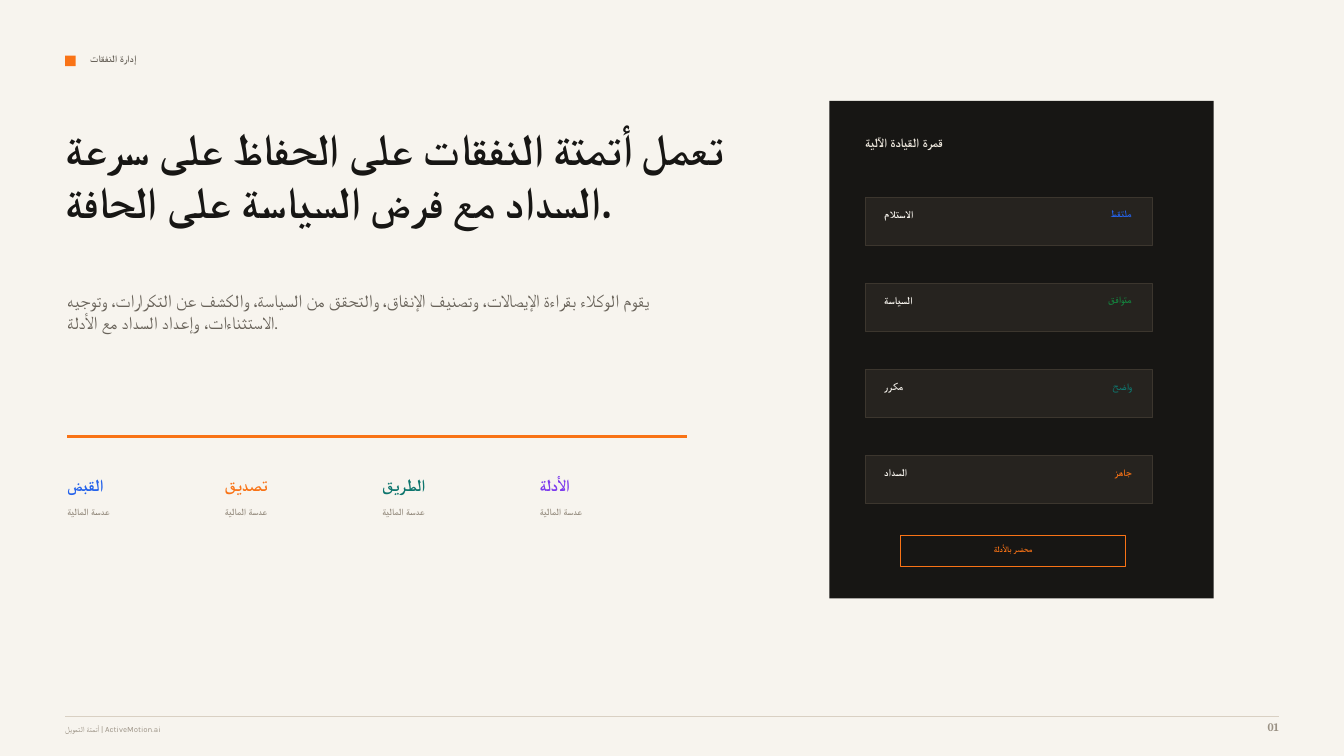
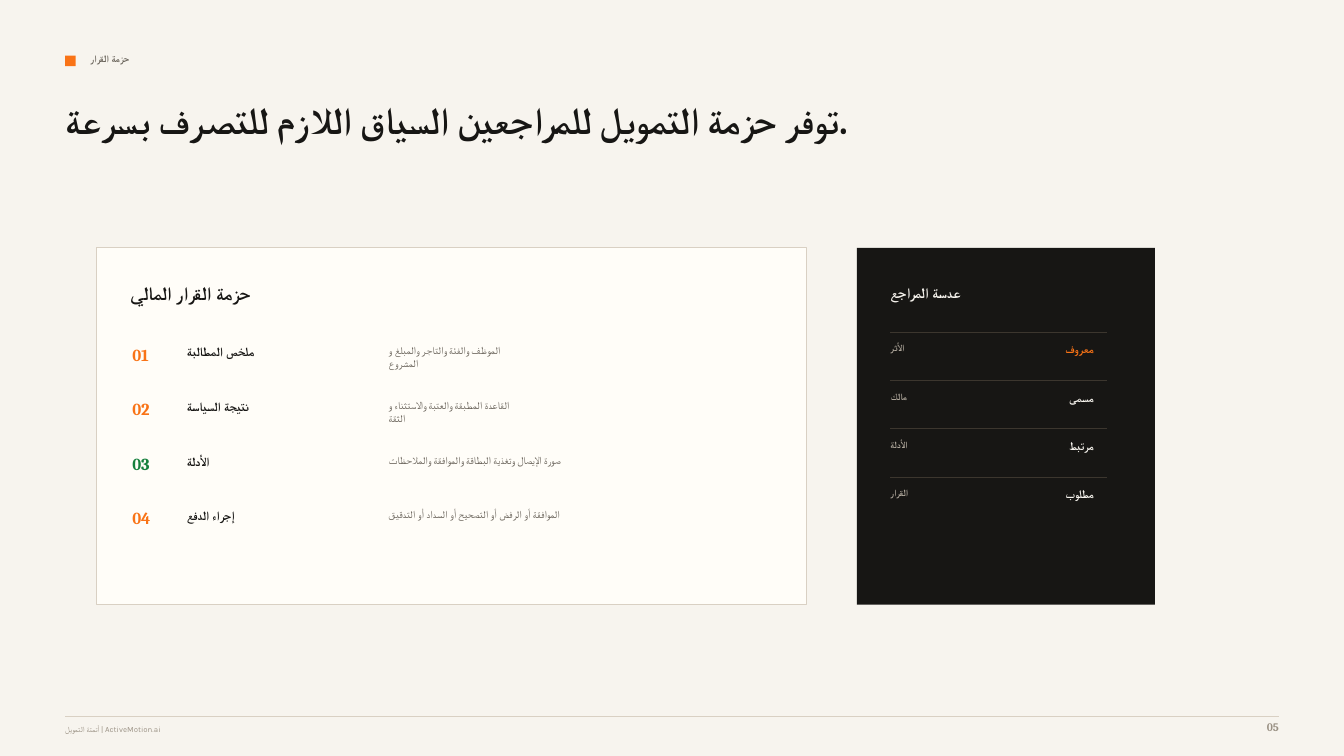
from lxml.etree import SubElement
from pptx import Presentation
from pptx.dml.color import RGBColor
from pptx.enum.shapes import MSO_CONNECTOR, MSO_SHAPE
from pptx.enum.text import MSO_ANCHOR, MSO_AUTO_SIZE, PP_ALIGN
from pptx.oxml.ns import qn
from pptx.util import Pt

PX = 9525  # EMU per px, 96 px to the inch
HAIRLINE = 0.75

# Colours
CREAM = RGBColor(0xF7, 0xF4, 0xEE)
IVORY = RGBColor(0xFF, 0xFD, 0xF8)
INK = RGBColor(0x17, 0x16, 0x14)
COAL = RGBColor(0x26, 0x23, 0x1F)
EDGE = RGBColor(0x3C, 0x36, 0x2E)
SAND = RGBColor(0xD9, 0xD0, 0xC3)
LINEN = RGBColor(0xED, 0xE7, 0xDD)
STONE = RGBColor(0xAF, 0xA7, 0x9B)
MUTED = RGBColor(0x9A, 0x91, 0x84)
GREY = RGBColor(0x69, 0x63, 0x5A)
ORANGE = RGBColor(0xF9, 0x73, 0x16)
BLUE = RGBColor(0x25, 0x63, 0xEB)
GREEN = RGBColor(0x15, 0x80, 0x3D)
TEAL = RGBColor(0x0F, 0x76, 0x6E)
VIOLET = RGBColor(0x7C, 0x3A, 0xED)

# Fonts
SERIF = "Cambria"
SANS = "Karla"


def write(tf, text, size=9, color=INK, font=SANS, bold=True, align=PP_ALIGN.LEFT, top=0):
    """Fill a text frame, one paragraph per line of text."""
    tf.word_wrap = True
    tf.auto_size = MSO_AUTO_SIZE.NONE
    tf.vertical_anchor = MSO_ANCHOR.TOP
    tf.margin_left = tf.margin_right = tf.margin_bottom = 0
    tf.margin_top = top * PX
    for i, line in enumerate(text.split("\n")):
        p = tf.add_paragraph() if i else tf.paragraphs[0]
        p.alignment = align
        r = p.add_run()
        r.text = line
        r.font.size = Pt(size)
        r.font.bold = bold
        r.font.name = font
        r.font.color.rgb = color
        # Arabic takes the complex-script font; no pair kerning, so spaces keep their width
        r.font._element.set("kern", "0")
        SubElement(r.font._element, qn("a:cs"), typeface=font)


class Deck:
    """Shared style and the slide being built; lengths are in px."""

    def __init__(self):
        self.prs = Presentation()
        self.prs.slide_width = 1280 * PX
        self.prs.slide_height = 720 * PX
        fill = self.prs.slide_master.background.fill
        fill.solid()
        fill.fore_color.rgb = CREAM
        self.s = None

    def slide(self, section, title, title_box, title_size, page):
        self.s = self.prs.slides.add_slide(self.prs.slide_layouts[5])
        # Section marker
        self.rect(62, 53, 10, 10, fill=ORANGE)
        self.text(86, 50, 560, 18, section, size=7.1, color=GREY)
        # Title
        sp = self.s.shapes.title
        sp.left, sp.top, sp.width, sp.height = (v * PX for v in title_box)
        write(sp.text_frame, title, size=title_size, font=SERIF)
        # Footer
        self.rule(62, 682, 1156, SAND)
        self.text(62, 690, 760, 14, "أتمتة التمويل | ActiveMotion.ai",
                  size=5.6, color=MUTED, bold=False)
        self.text(1170, 686, 48, 18, page, size=8.2, color=MUTED, font=SERIF,
                  align=PP_ALIGN.RIGHT)

    def text(self, x, y, w, h, text, **fmt):
        sp = self.s.shapes.add_textbox(x * PX, y * PX, w * PX, h * PX)
        write(sp.text_frame, text, **fmt)

    def rect(self, x, y, w, h, fill=None, line=None):
        sp = self.s.shapes.add_shape(MSO_SHAPE.RECTANGLE, x * PX, y * PX, w * PX, h * PX)
        sp.shadow.inherit = False
        if fill is None:
            sp.fill.background()
        else:
            sp.fill.solid()
            sp.fill.fore_color.rgb = fill
        if line is None:
            sp.line.fill.background()
        else:
            sp.line.color.rgb = line
            sp.line.width = Pt(HAIRLINE)
        return sp

    def rule(self, x, y, w, color, thickness=1):
        """Horizontal line whose upper edge is at y."""
        mid = y * PX + thickness * PX // 2
        ln = self.s.shapes.add_connector(MSO_CONNECTOR.STRAIGHT, x * PX, mid, (x + w) * PX, mid)
        ln.line.color.rgb = color
        ln.line.width = thickness * PX
        SubElement(ln._element.spPr, qn("a:effectLst"))


def overview(d):
    d.slide("إدارة النفقات",
            "تعمل أتمتة النفقات على الحفاظ على سرعة السداد مع فرض السياسة على الحافة.",
            (62, 116, 690, 126), 31.5, "01")
    d.text(64, 276, 620, 88,
           "يقوم الوكلاء بقراءة الإيصالات، وتصنيف الإنفاق، والتحقق من السياسة، "
           "والكشف عن التكرارات، وتوجيه الاستثناءات، وإعداد السداد مع الأدلة.",
           size=12.8, color=GREY, bold=False)

    # Four steps under the orange rule
    d.rule(64, 414, 590, ORANGE, thickness=3)
    steps = [("القبض", BLUE), ("تصديق", ORANGE), ("الطريق", TEAL), ("الأدلة", VIOLET)]
    for i, (step, color) in enumerate(steps):
        x = 64 + 150 * i
        d.text(x, 452, 120, 20, step, size=12, color=color, font=SERIF)
        d.text(x, 482, 110, 16, "عدسة المالية", size=6.8, color=MUTED)

    # Cockpit panel
    d.rect(790, 96, 366, 474, fill=INK)
    d.text(824, 128, 220, 24, "قمرة القيادة الآلية", color=LINEN)
    checks = [("الاستلام", "ملتقط", BLUE), ("السياسة", "متوافق", GREEN),
              ("مكرر", "واضح", TEAL), ("السداد", "جاهز", ORANGE)]
    for i, (check, status, color) in enumerate(checks):
        y = 188 + 82 * i
        d.rect(824, y, 274, 46, fill=COAL, line=EDGE)
        d.text(842, y + 10, 130, 16, check, size=7.5, color=CREAM)
        d.text(982, y + 10, 96, 16, status, size=7.1, color=color, align=PP_ALIGN.RIGHT)
    badge = d.rect(858, 510, 214, 30, line=ORANGE)
    write(badge.text_frame, "محضر بالأدلة", size=6, color=ORANGE,
          align=PP_ALIGN.CENTER, top=8)


def decision_packet(d):
    d.slide("حزمة القرار", "توفر حزمة التمويل للمراجعين السياق اللازم للتصرف بسرعة.",
            (62, 92, 900, 98), 27, "05")

    # Packet card
    d.rect(92, 236, 676, 340, fill=IVORY, line=SAND)
    d.text(124, 268, 300, 24, "حزمة القرار المالي", size=13.5)
    parts = [
        ("ملخص المطالبة", "الموظف والفئة والتاجر والمبلغ و\nالمشروع", ORANGE),
        ("نتيجة السياسة", "القاعدة المطبقة والعتبة والاستثناء و\nالثقة", ORANGE),
        ("الأدلة", "صورة الإيصال وتغذية البطاقة والموافقة والملاحظات", GREEN),
        ("إجراء الدفع", "الموافقة أو الرفض أو التصحيح أو السداد أو التدقيق", ORANGE),
    ]
    for i, (part, detail, color) in enumerate(parts):
        y = 328 + 52 * i
        d.text(126, y, 34, 24, f"{i + 1:02}", size=12, color=color, font=SERIF)
        d.text(178, y, 174, 18, part)
        d.text(370, y, 320, 30, detail, size=7.5, color=GREY, bold=False)

    # Reviewer panel
    d.rect(816, 236, 284, 340, fill=INK)
    d.text(848, 270, 160, 20, "عدسة المراجع", size=10.5, color=CREAM)
    facts = [("الأثر", "معروف", ORANGE), ("مالك", "مسمى", CREAM),
             ("الأدلة", "مرتبط", CREAM), ("القرار", "مطلوب", CREAM)]
    for i, (fact, state, color) in enumerate(facts):
        y = 316 + 46 * i
        d.rule(848, y, 206, EDGE)
        d.text(848, y + 10, 92, 16, fact, size=6.8, color=STONE)
        d.text(960, y + 10, 82, 16, state, size=8.2, color=color, align=PP_ALIGN.RIGHT)


def main():
    d = Deck()
    overview(d)
    decision_packet(d)
    d.prs.save("out.pptx")


if __name__ == "__main__":
    main()
